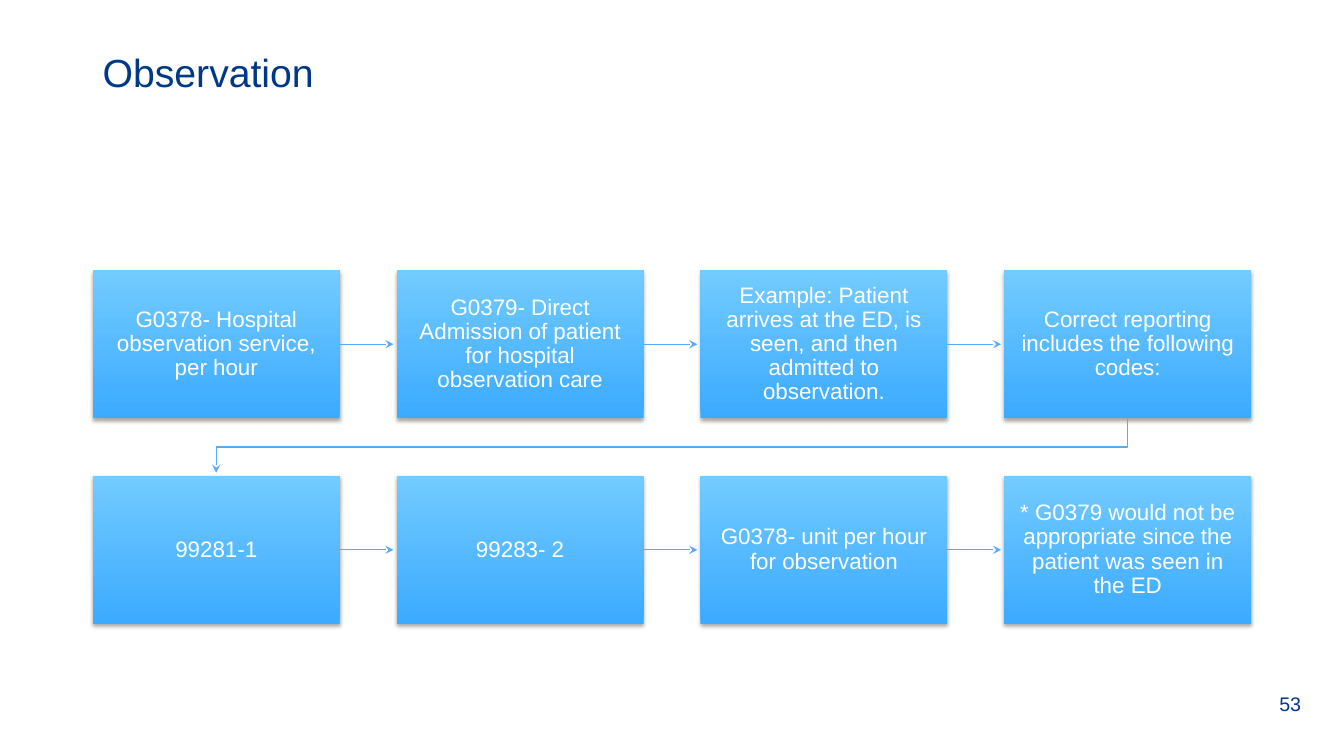
from lxml.etree import SubElement
from pptx import Presentation
from pptx.dml.color import RGBColor
from pptx.enum.shapes import MSO_CONNECTOR, MSO_SHAPE
from pptx.enum.text import MSO_ANCHOR, PP_ALIGN
from pptx.oxml.ns import qn
from pptx.util import Inches, Pt

NAVY = RGBColor(0x00, 0x38, 0x89)
WHITE = RGBColor(0xFF, 0xFF, 0xFF)
LINE_BLUE = RGBColor(0x55, 0xAA, 0xFF)
DEEP_BLUE = RGBColor(0x3B, 0xAA, 0xFF)
LIGHT_BLUE = RGBColor(0x73, 0xCB, 0xFF)

STEPS = [
    "G0378- Hospital observation service, per hour",
    "G0379- Direct Admission of patient for hospital observation care",
    "Example: Patient arrives at the ED, is seen, and then admitted to observation.",
    "Correct reporting includes the following codes:",
    "99281-1",
    "99283- 2",
    "G0378- unit per hour for observation",
    "* G0379 would not be appropriate since the patient was seen in the ED",
]
COLUMNS = 4


def set_attributes(target, values):
    for name, value in values.items():
        setattr(target, name, value)


class FlowSlide:
    font_name = "Arial"
    left, top = Inches(0.92), Inches(2.68)
    box_width, box_height = Inches(2.45), Inches(1.47)
    column_step = Inches(9.04) / (COLUMNS - 1)
    row_step = Inches(2.04)
    arrow_gap = Inches(0.03)

    def __init__(self, presentation):
        self.slide = presentation.slides.add_slide(presentation.slide_layouts[6])

    def cell(self, index):
        """Left and top of the numbered grid cell."""
        row, column = divmod(index, COLUMNS)
        return (round(self.left + column * self.column_step),
                self.top + row * self.row_step)

    def fill_text(self, shape, text, size, color, margins, **paragraph_format):
        side, end = (Inches(margin) for margin in margins)
        frame = shape.text_frame
        set_attributes(frame, {
            "word_wrap": True, "vertical_anchor": MSO_ANCHOR.MIDDLE,
            "margin_left": side, "margin_right": side,
            "margin_top": end, "margin_bottom": end})
        paragraph = frame.paragraphs[0]
        paragraph.text = text
        set_attributes(paragraph, paragraph_format)
        set_attributes(paragraph.font, {"name": self.font_name, "size": Pt(size)})
        paragraph.font.color.rgb = color

    def label(self, text, bounds, size, **paragraph_format):
        box = self.slide.shapes.add_textbox(*(Inches(length) for length in bounds))
        self.fill_text(box, text, size, NAVY, (0.1, 0.05), **paragraph_format)

    def step(self, index, text):
        box = self.slide.shapes.add_shape(
            MSO_SHAPE.RECTANGLE, *self.cell(index), self.box_width, self.box_height)
        box.fill.gradient()
        box.fill.gradient_angle = 90
        for stop, color in zip(box.fill.gradient_stops, (DEEP_BLUE, LIGHT_BLUE)):
            stop.color.rgb = color
        box.line.fill.background()
        self.add_shadow(box)
        self.fill_text(box, text, 16, WHITE, (0.12, 0.13),
                       alignment=PP_ALIGN.CENTER, line_spacing=0.9)
        return box

    def add_shadow(self, shape):
        shape.shadow.inherit = False
        effects = shape.element.spPr.find(qn("a:effectLst"))
        shadow = SubElement(effects, qn("a:outerShdw"), blurRad=str(Pt(3.1)),
                            dist=str(Pt(1.8)), dir="5400000", rotWithShape="0")
        color = SubElement(shadow, qn("a:srgbClr"), val="000000")
        SubElement(color, qn("a:alpha"), val="35000")

    def style_arrow(self, shape):
        shape.line.color.rgb = LINE_BLUE
        shape.line.width = Pt(0.75)
        properties = shape.element.spPr
        SubElement(properties.find(qn("a:ln")), qn("a:tailEnd"), type="stealth")
        if properties.find(qn("a:effectLst")) is None:
            SubElement(properties, qn("a:effectLst"))

    def arrow(self, start, end):
        """Arrow from the right side of one box to just short of the next."""
        middle = start.top + self.box_height // 2
        connector = self.slide.shapes.add_connector(
            MSO_CONNECTOR.STRAIGHT, start.left + start.width, middle,
            end.left - self.arrow_gap, middle)
        connector.begin_connect(start, 3)
        self.style_arrow(connector)

    def return_arrow(self, start, end):
        """Bent arrow from the end of one row to the start of the next."""
        start_x, end_x = (box.left + box.width // 2 for box in (start, end))
        bottom = start.top + start.height
        turn = (bottom + end.top) // 2
        builder = self.slide.shapes.build_freeform(start_x, bottom)
        builder.add_line_segments(
            [(start_x, turn), (end_x, turn), (end_x, end.top - self.arrow_gap)],
            close=False)
        route = builder.convert_to_shape()
        route.fill.background()
        route.shadow.inherit = False
        self.style_arrow(route)


def main():
    presentation = Presentation()
    set_attributes(presentation, {"slide_width": Inches(13.33),
                                  "slide_height": Inches(7.5)})
    flow = FlowSlide(presentation)
    flow.label("53", (12.59, 6.8, 0.63, 0.4), 14, line_spacing=0.9, space_after=Pt(6))
    flow.label("Observation", (0.92, 0.4, 11.5, 0.63), 28)
    boxes = [flow.step(index, text) for index, text in enumerate(STEPS)]
    for index, (start, end) in enumerate(zip(boxes, boxes[1:]), 1):
        connect = flow.arrow if index % COLUMNS else flow.return_arrow
        connect(start, end)
    presentation.save("out.pptx")


if __name__ == "__main__":
    main()
